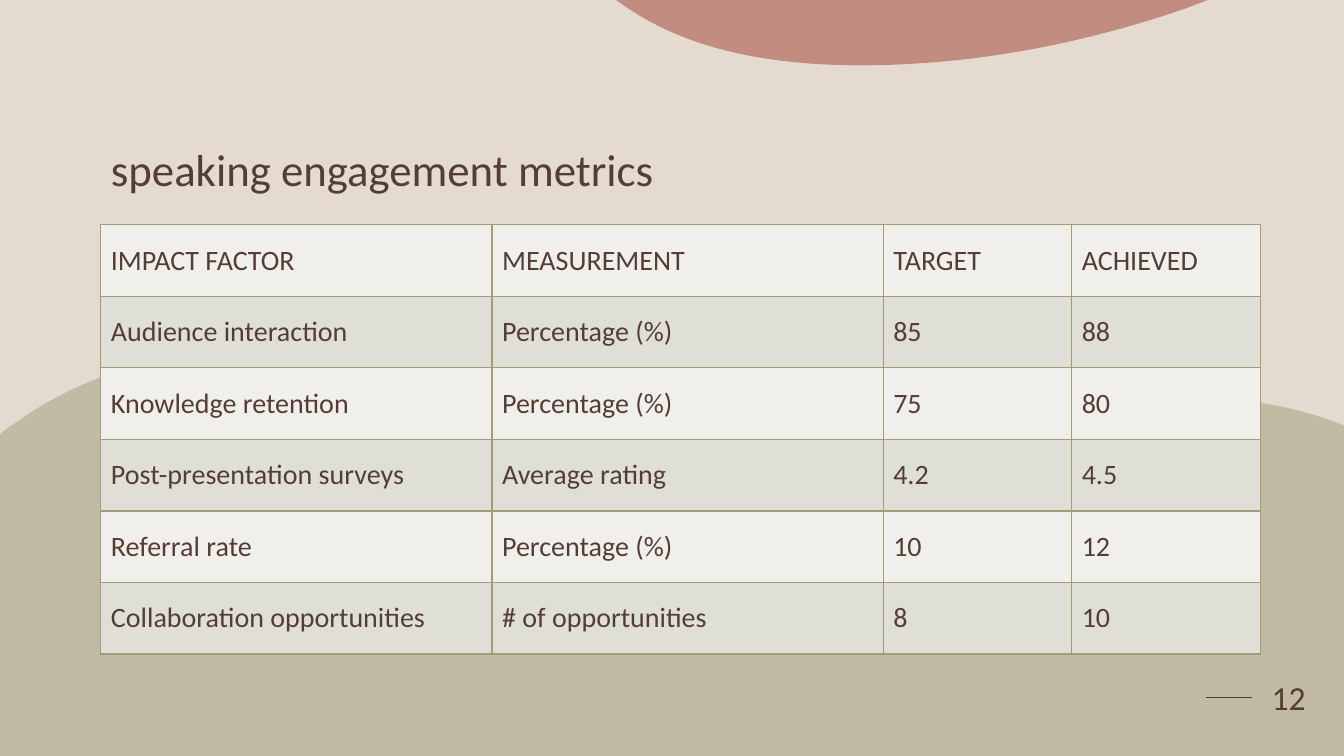
from dataclasses import dataclass

import lxml.etree
import pptx
import pptx.dml.color
import pptx.enum.shapes
import pptx.enum.text
import pptx.oxml.ns
import pptx.util

Inches = pptx.util.Inches
Pt = pptx.util.Pt
qn = pptx.oxml.ns.qn
Anchor = pptx.enum.text.MSO_ANCHOR
Align = pptx.enum.text.PP_ALIGN

FONT = "Calibri"
COLORS = {
    "background": "E5DACF",
    "text": "543E34",
    "olive": "A09D79",
    "clay": "AC5B4C",
    "light_row": "F0EFEC",
    "dark_row": "DFDFD7",
}
UNITS_PER_INCH = 1000


@dataclass(frozen=True)
class Blob:
    color: str
    opacity: int
    left: float
    top: float
    height: float
    start: tuple[float, float]
    segments: tuple[tuple[float, ...], ...]


HILL = Blob("olive", 50, 0, 3.58, 3.92, (2.02, 3.58), (
    (2.36, 3.59, 2.7, 3.66, 3.04, 3.79),
    (3.34, 3.9, 3.6, 4.08, 3.86, 4.25),
    (4.43, 4.62, 5.05, 4.9, 5.77, 5),
    (6.37, 5.09, 6.98, 5.03, 7.59, 4.88),
    (8.27, 4.72, 8.67, 4.57, 9.08, 4.43),
    (9.48, 4.29, 11.61, 3.57, 13.25, 4.19),
    (13.33, 4.22),
    (13.33, 7.5),
    (0, 7.5),
    (0, 4.31),
    (0.07, 4.25),
    (0.16, 4.19, 0.25, 4.13, 0.34, 4.07),
    (0.9, 3.72, 1.46, 3.56, 2.02, 3.58),
))
CLOUD = Blob("clay", 60, 6.11, 0, 0.65, (6.11, 0), (
    (11.98, 0),
    (11.77, 0.08),
    (10.56, 0.5, 9.61, 0.59, 9.24, 0.62),
    (7.56, 0.75, 6.71, 0.41, 6.21, 0.07),
))

COLUMN_WIDTHS = (3.88, 3.88, 1.87, 1.87)
ROW_HEIGHT = 0.71
METRICS = (
    ("IMPACT FACTOR", "MEASUREMENT", "TARGET", "ACHIEVED"),
    ("Audience interaction", "Percentage (%)", "85", "88"),
    ("Knowledge retention", "Percentage (%)", "75", "80"),
    ("Post-presentation surveys", "Average rating", "4.2", "4.5"),
    ("Referral rate", "Percentage (%)", "10", "12"),
    ("Collaboration opportunities", "# of opportunities", "8", "10"),
)


def rgb(name: str) -> pptx.dml.color.RGBColor:
    return pptx.dml.color.RGBColor.from_string(COLORS[name])


def units(length: float) -> int:
    return round(length * UNITS_PER_INCH)


def write(frame, text: str, size: int, align=Align.LEFT) -> None:
    frame.text = text
    paragraph = frame.paragraphs[0]
    paragraph.alignment = align
    font = paragraph.runs[0].font
    font.name = FONT
    font.size = Pt(size)
    font.color.rgb = rgb("text")


def bend_segments(outline, blob: Blob) -> None:
    route = outline._element.spPr.find(f".//{qn('a:path')}")
    route.set("h", str(units(blob.height)))
    for line, segment in zip(route.findall(qn("a:lnTo")), blob.segments):
        if len(segment) == 2:
            continue
        curve = lxml.etree.Element(qn("a:cubicBezTo"))
        for x, y in zip(segment[::2], segment[1::2]):
            lxml.etree.SubElement(curve, qn("a:pt"), x=str(units(x - blob.left)),
                                  y=str(units(y - blob.top)))
        route.replace(line, curve)


def draw_blob(shapes, blob: Blob) -> None:
    corners = [(units(segment[-2]), units(segment[-1])) for segment in blob.segments]
    builder = shapes.build_freeform(
        units(blob.start[0]), units(blob.start[1]), scale=Inches(1) / UNITS_PER_INCH)
    builder.add_line_segments(corners, close=True)
    outline = builder.convert_to_shape()
    outline.height = Inches(blob.height)
    bend_segments(outline, blob)
    outline.shadow.inherit = False
    outline.line.fill.background()
    outline.fill.solid()
    outline.fill.fore_color.rgb = rgb(blob.color)
    color = outline._element.spPr.find(f"{qn('a:solidFill')}/{qn('a:srgbClr')}")
    lxml.etree.SubElement(color, qn("a:alpha"), val=str(blob.opacity * 1000))


def add_borders(cell) -> None:
    properties = cell._tc.get_or_add_tcPr()
    for side in ("lnL", "lnR", "lnT", "lnB"):
        border = lxml.etree.SubElement(properties, qn(f"a:{side}"), w=str(Pt(1)))
        fill = lxml.etree.SubElement(border, qn("a:solidFill"))
        lxml.etree.SubElement(fill, qn("a:srgbClr"), val=COLORS["olive"])


def draw_metrics(shapes) -> None:
    metrics = shapes.add_table(
        len(METRICS), len(COLUMN_WIDTHS), Inches(1), Inches(2.23),
        Inches(sum(COLUMN_WIDTHS)), Inches(ROW_HEIGHT * len(METRICS))).table
    metrics.first_row = False
    metrics.horz_banding = False
    for column, width in zip(metrics.columns, COLUMN_WIDTHS):
        column.width = Inches(width)
    for index, (row, values) in enumerate(zip(metrics.rows, METRICS)):
        row.height = Inches(ROW_HEIGHT)
        for cell, value in zip(row.cells, values):
            write(cell.text_frame, value, 20)
            cell.vertical_anchor = Anchor.MIDDLE
            add_borders(cell)
            cell.fill.solid()
            cell.fill.fore_color.rgb = rgb("dark_row" if index % 2 else "light_row")


def draw_title(title) -> None:
    title.left, title.top = Inches(1), Inches(1)
    title.width, title.height = Inches(11.33), Inches(1)
    frame = title.text_frame
    write(frame, "speaking engagement metrics", 32)
    frame.paragraphs[0].line_spacing = 0.9
    frame.vertical_anchor = Anchor.BOTTOM
    frame.word_wrap = True
    frame.auto_size = pptx.enum.text.MSO_AUTO_SIZE.NONE


def draw_page_number(shapes) -> None:
    page_number = shapes.add_textbox(Inches(12.42), Inches(6.43), Inches(0.72), Inches(0.98))
    page_number.text_frame.word_wrap = True
    page_number.text_frame.vertical_anchor = Anchor.MIDDLE
    write(page_number.text_frame, "12", 24, Align.CENTER)
    dash = shapes.add_connector(
        pptx.enum.shapes.MSO_CONNECTOR.STRAIGHT,
        Inches(11.96), Inches(6.92), Inches(12.42), Inches(6.92))
    dash.end_connect(page_number, 1)
    dash.line.color.rgb = rgb("text")
    dash.line.width = Pt(1.25)
    lxml.etree.SubElement(dash._element.spPr, qn("a:effectLst"))


def main() -> None:
    deck = pptx.Presentation()
    deck.slide_width, deck.slide_height = Inches(13.33), Inches(7.5)
    slide = deck.slides.add_slide(deck.slide_layouts.get_by_name("Title Only"))
    slide.background.fill.solid()
    slide.background.fill.fore_color.rgb = rgb("background")
    for blob in (HILL, CLOUD):
        draw_blob(slide.shapes, blob)
    draw_title(slide.shapes.title)
    draw_metrics(slide.shapes)
    draw_page_number(slide.shapes)
    deck.save("out.pptx")


if __name__ == "__main__":
    main()
